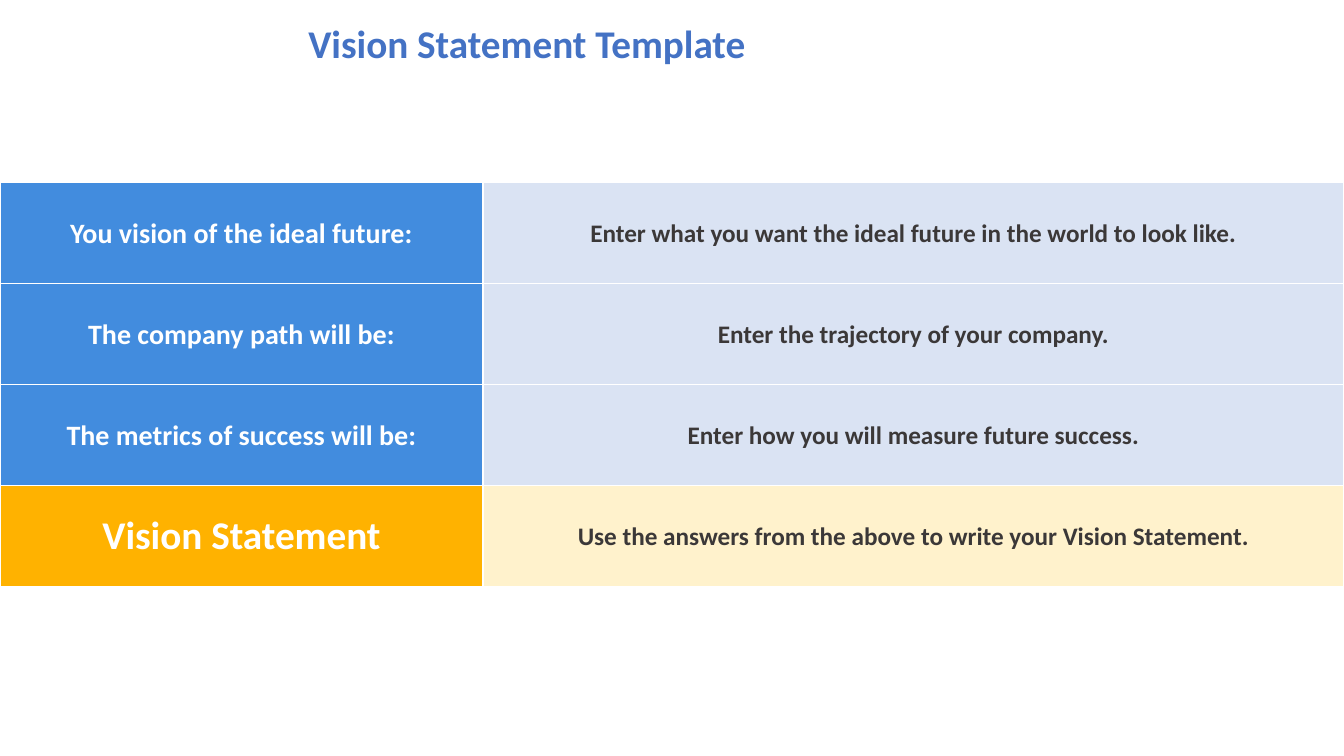
from lxml import etree
from pptx import Presentation
from pptx.dml.color import RGBColor
from pptx.enum import text
from pptx.oxml import ns
from pptx.util import Inches, Pt

TITLE_BLUE = RGBColor(0x44, 0x72, 0xC4)
BLUE = RGBColor(0x42, 0x8C, 0xDE)
PALE_BLUE = RGBColor(0xDA, 0xE3, 0xF3)
AMBER = RGBColor(0xFF, 0xB2, 0x00)
PALE_AMBER = RGBColor(0xFF, 0xF2, 0xCC)
WHITE = RGBColor(0xFF, 0xFF, 0xFF)
DARK = RGBColor(0x3B, 0x38, 0x38)

ROWS = [
    ("You vision of the ideal future:", 20, BLUE,
     "Enter what you want the ideal future in the world to look like.", PALE_BLUE),
    ("The company path will be:", 20, BLUE,
     "Enter the trajectory of your company.", PALE_BLUE),
    ("The metrics of success will be:", 20, BLUE,
     "Enter how you will measure future success.", PALE_BLUE),
    ("Vision Statement", 28, AMBER,
     "Use the answers from the above to write your Vision Statement.", PALE_AMBER),
]
CELL_FORMAT = {
    "margin_left": Inches(0.01),
    "margin_right": Inches(0.01),
    "margin_top": Inches(0.01),
    "margin_bottom": 0,
    "vertical_anchor": text.MSO_ANCHOR.MIDDLE,
}


def write(p, words, size, color):
    r = p.add_run()
    r.text = words
    font = {"name": "Calibri", "size": Pt(size), "bold": True}
    for name, value in font.items():
        setattr(r.font, name, value)
    r.font.color.rgb = color


def add_borders(cell, color, width):
    tcPr = cell._tc.get_or_add_tcPr()
    for side in ("lnL", "lnR", "lnT", "lnB"):
        ln = etree.SubElement(tcPr, ns.qn(f"a:{side}"), w=str(Pt(width)))
        fill = etree.SubElement(ln, ns.qn("a:solidFill"))
        etree.SubElement(fill, ns.qn("a:srgbClr"), val=str(color))


prs = Presentation()
prs.slide_width, prs.slide_height = Inches(13.33), Inches(7.5)
s = prs.slides.add_slide(prs.slide_layouts[6])

title = s.shapes.add_textbox(Inches(2.96), Inches(0.15), Inches(10.27), Inches(0.6))
tf = title.text_frame
tf.word_wrap = True
tf.vertical_anchor = text.MSO_ANCHOR.MIDDLE
tf.paragraphs[0].line_spacing = 0.9
write(tf.paragraphs[0], "Vision Statement Template", 28, TITLE_BLUE)

table = s.shapes.add_table(len(ROWS), 2, 0, Inches(1.81), Inches(13.33), Inches(4.01)).table
table.first_row = table.horz_banding = False
table.columns[0].width = Inches(4.79)
table.columns[1].width = Inches(8.54)

for row, (label, size, label_fill, answer, answer_fill) in zip(table.rows, ROWS):
    contents = [(label, size, WHITE, label_fill), (answer, 18, DARK, answer_fill)]
    for cell, (words, points, color, fill) in zip(row.cells, contents):
        for name, value in CELL_FORMAT.items():
            setattr(cell, name, value)
        add_borders(cell, WHITE, 1)
        cell.fill.solid()
        cell.fill.fore_color.rgb = fill
        p = cell.text_frame.paragraphs[0]
        p.alignment = text.PP_ALIGN.CENTER
        write(p, words, points, color)

prs.save("out.pptx")
